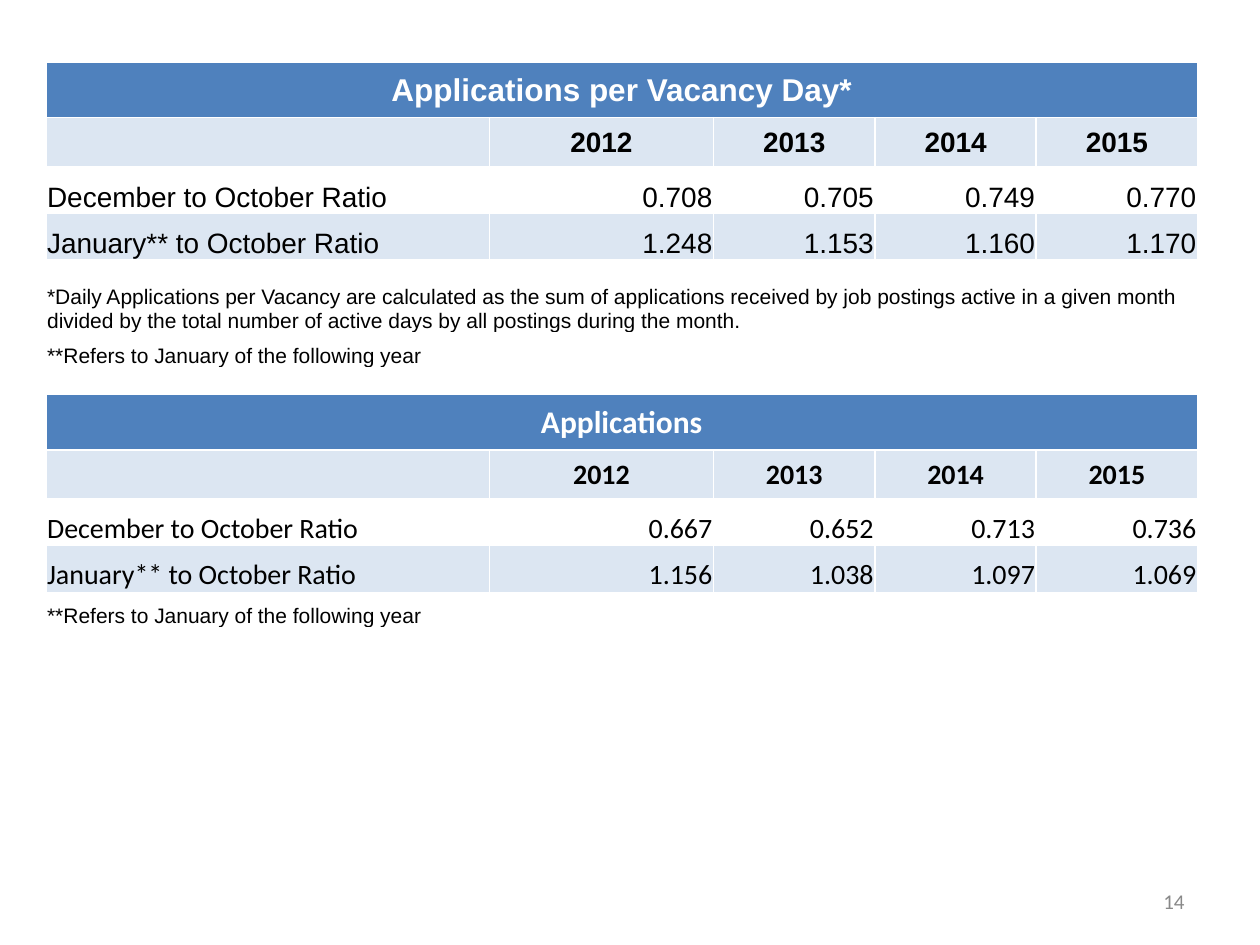
from dataclasses import dataclass

from lxml import etree
from pptx import Presentation
from pptx import util as u
from pptx.dml.color import RGBColor
from pptx.enum import text
from pptx.oxml.ns import qn


@dataclass(frozen=True)
class Theme:
    sans: str = "Arial"
    body: str = "Calibri"
    banner: str = "4F81BD"
    band: str = "DCE6F2"
    white: str = "FFFFFF"
    ink: str = "000000"
    muted: str = "898989"
    heading_size: int = 18
    figure_size: int = 16
    note_size: int = 12


class RatioSlide:
    columns = (253.4, 128.2, 92.2, 92.2, 92.2)
    data_rows = (31.7, 28, 26.7, 26.6)
    left = 26.2

    def __init__(self, theme, slide):
        self.theme = theme
        self.slide = slide

    def add_text(self, frame, wording, align, font, size, color, bold=False):
        paragraph = frame.paragraphs[0]
        paragraph.alignment = align
        run = paragraph.add_run()
        run.text = wording
        run.font.name = font
        run.font.size = u.Pt(size)
        run.font.bold = bold
        run.font.color.rgb = RGBColor.from_string(color)

    def borders(self, cell):
        properties = cell._tc.get_or_add_tcPr()
        for position, side in enumerate(("lnL", "lnR", "lnT", "lnB")):
            line = etree.Element(qn(f"a:{side}"), w=str(u.Pt(1)))
            fill = etree.SubElement(line, qn("a:solidFill"))
            etree.SubElement(fill, qn("a:srgbClr"), val=self.theme.white)
            properties.insert(position, line)

    def cell(self, cell, fill, anchor):
        cell.fill.solid()
        cell.fill.fore_color.rgb = RGBColor.from_string(fill)
        cell.vertical_anchor = anchor
        cell.margin_left = cell.margin_right = cell.margin_top = u.Pt(0.75)
        cell.margin_bottom = 0
        self.borders(cell)

    def table(self, top, font, heading, years, ratios, notes):
        theme = self.theme
        align, anchor = text.PP_ALIGN, text.MSO_ANCHOR
        heights = (*self.data_rows, *(height for _, height in notes))
        grid = self.slide.shapes.add_table(
            len(heights), len(self.columns), u.Pt(self.left), u.Pt(top),
            u.Pt(sum(self.columns)), u.Pt(sum(heights))).table
        for column, width in zip(grid.columns, self.columns):
            column.width = u.Pt(width)
        for row, height in zip(grid.rows, heights):
            row.height = u.Pt(height)

        fills = [theme.banner, theme.band, theme.white, theme.band]
        fills += [theme.white] * len(notes)
        for index, fill in enumerate(fills):
            for cell in grid.rows[index].cells:
                self.cell(cell, fill, anchor.MIDDLE if index < 2 else anchor.BOTTOM)

        first_note = len(self.data_rows)
        for index in (0, *range(first_note, len(heights))):
            grid.cell(index, 0).merge(grid.cell(index, len(self.columns) - 1))

        self.add_text(grid.cell(0, 0).text_frame, heading, align.CENTER, font,
                      theme.heading_size, theme.white, True)
        for column, year in enumerate(years, 1):
            self.add_text(grid.cell(1, column).text_frame, year, align.CENTER, font,
                          theme.figure_size, theme.ink, True)
        for index, ratio in enumerate(ratios, 2):
            for column, wording in enumerate(ratio):
                self.add_text(grid.cell(index, column).text_frame, wording,
                              align.RIGHT if column else align.LEFT, font,
                              theme.figure_size, theme.ink)
        for index, (note, _) in enumerate(notes, first_note):
            self.add_text(grid.cell(index, 0).text_frame, note, align.LEFT,
                          theme.sans, theme.note_size, theme.ink)

    def page_number(self, number):
        frame = self.slide.shapes.add_textbox(
            u.Pt(516), u.Pt(500.5), u.Pt(168), u.Pt(28.75)).text_frame
        frame.word_wrap = True
        frame.vertical_anchor = text.MSO_ANCHOR.MIDDLE
        self.add_text(frame, number, text.PP_ALIGN.RIGHT, self.theme.body,
                      self.theme.note_size, self.theme.muted)


def main():
    deck = Presentation()
    deck.slide_width, deck.slide_height = u.Pt(720), u.Pt(540)
    theme = Theme()
    page = RatioSlide(theme, deck.slides.add_slide(deck.slide_layouts[6]))
    years = ("2012", "2013", "2014", "2015")
    december, january = "December to October Ratio", "January** to October Ratio"
    january_note = ("**Refers to January of the following year", 20.2)
    daily_note = (
        "*Daily Applications per Vacancy are calculated as the sum of applications "
        "received by job postings active in a given month divided by the total "
        "number of active days by all postings during the month.", 41.8)

    page.page_number("14")
    page.table(35.5, theme.sans, "Applications per Vacancy Day*", years,
               ((december, "0.708", "0.705", "0.749", "0.770"),
                (january, "1.248", "1.153", "1.160", "1.170")),
               (daily_note, january_note))
    page.table(225.5, theme.body, "Applications", years,
               ((december, "0.667", "0.652", "0.713", "0.736"),
                (january, "1.156", "1.038", "1.097", "1.069")),
               (january_note,))
    deck.save("out.pptx")


if __name__ == "__main__":
    main()
